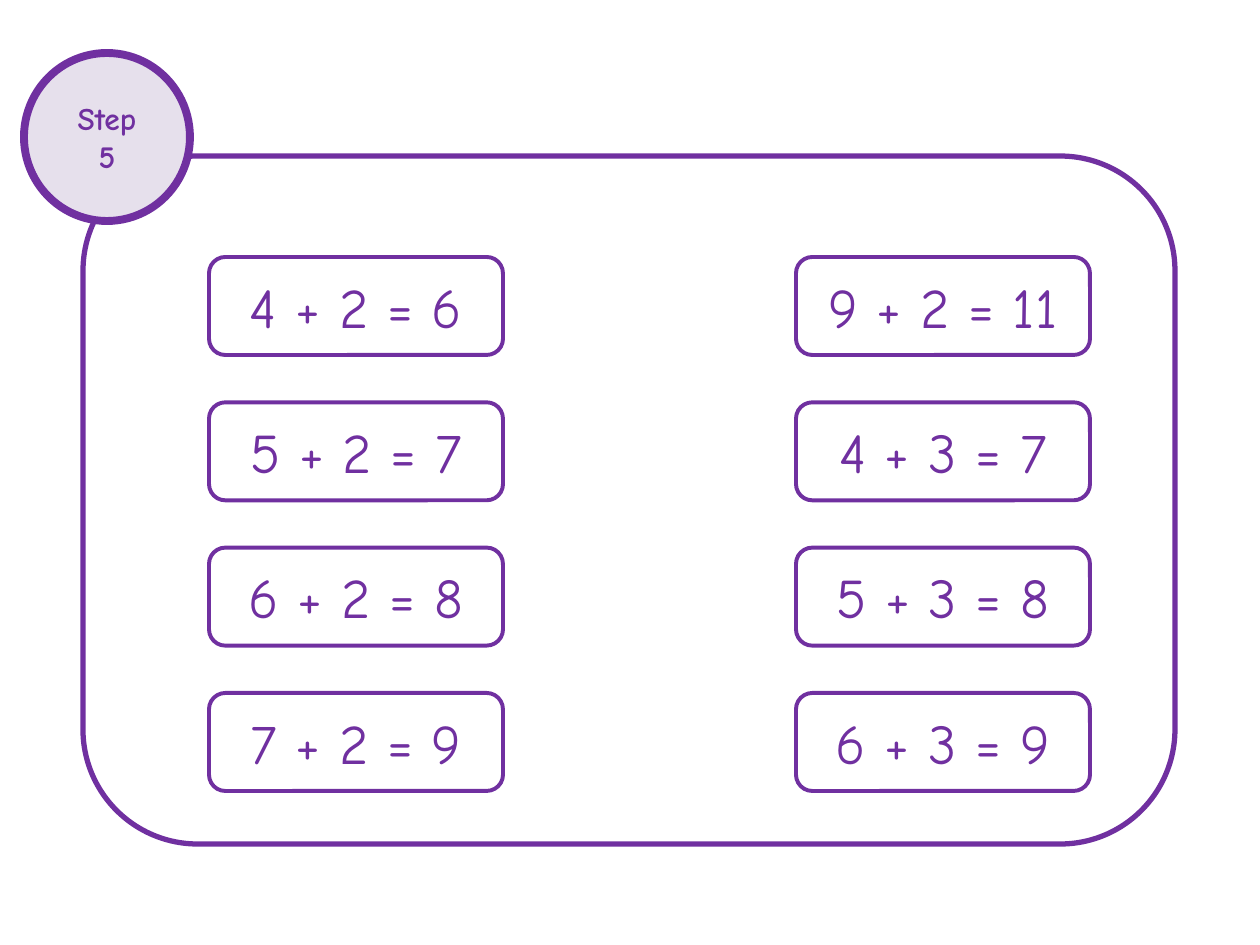
import pptx
import pptx.util
import pptx.dml.color
import pptx.enum.shapes
import pptx.enum.text

PURPLE, LILAC, WHITE = "7030A0", "E6E0EC", "FFFFFF"
FONT = "Comic Neue"
STEP = ["Step", "5"]
SUMS = [
    ["4 + 2 = 6", "5 + 2 = 7", "6 + 2 = 8", "7 + 2 = 9"],
    ["9 + 2 = 11", "4 + 3 = 7", "5 + 3 = 8", "6 + 3 = 9"],
]
FRAME = (83, 156, 1092, 688)
BADGE = (24, 53, 166, 168)
CARD_W, CARD_H = 294, 98
COLUMN_LEFTS = (209, 796)
FIRST_TOP, LAST_TOP = 257, 693

SHAPES = pptx.enum.shapes.MSO_SHAPE


def px(n):
    return pptx.util.Emu(round(n * 914400 / 126))


def color(value):
    return pptx.dml.color.RGBColor.from_string(value)


def add_box(s, kind, box, fill, width):
    sp = s.shapes.add_shape(kind, *map(px, box))
    sp.shadow.inherit = False
    sp.fill.solid()
    sp.fill.fore_color.rgb = color(fill)
    sp.line.color.rgb = color(PURPLE)
    sp.line.width = pptx.util.Pt(width)
    return sp


def add_text(sp, lines, size, bold=False):
    tf = sp.text_frame
    tf.word_wrap = True
    tf.vertical_anchor = pptx.enum.text.MSO_ANCHOR.MIDDLE
    for i, line in enumerate(lines):
        p = tf.add_paragraph() if i else tf.paragraphs[0]
        p.alignment = pptx.enum.text.PP_ALIGN.CENTER
        r = p.add_run()
        r.text = line
        r.font.name = FONT
        r.font.size = pptx.util.Pt(size)
        r.font.bold = bold
        r.font.color.rgb = color(PURPLE)


def main():
    prs = pptx.Presentation()
    prs.slide_width, prs.slide_height = px(1260), px(945)
    s = prs.slides.add_slide(prs.slide_layouts[6])
    add_box(s, SHAPES.ROUNDED_RECTANGLE, FRAME, WHITE, 3)
    for left, column in zip(COLUMN_LEFTS, SUMS):
        pitch = (LAST_TOP - FIRST_TOP) / (len(column) - 1)
        for row, text in enumerate(column):
            box = (left, FIRST_TOP + row * pitch, CARD_W, CARD_H)
            card = add_box(s, SHAPES.ROUNDED_RECTANGLE, box, WHITE, 2.25)
            add_text(card, [text], size=32)
    badge = add_box(s, SHAPES.OVAL, BADGE, LILAC, 4.5)
    add_text(badge, STEP, size=18, bold=True)
    prs.save("out.pptx")


if __name__ == "__main__":
    main()
